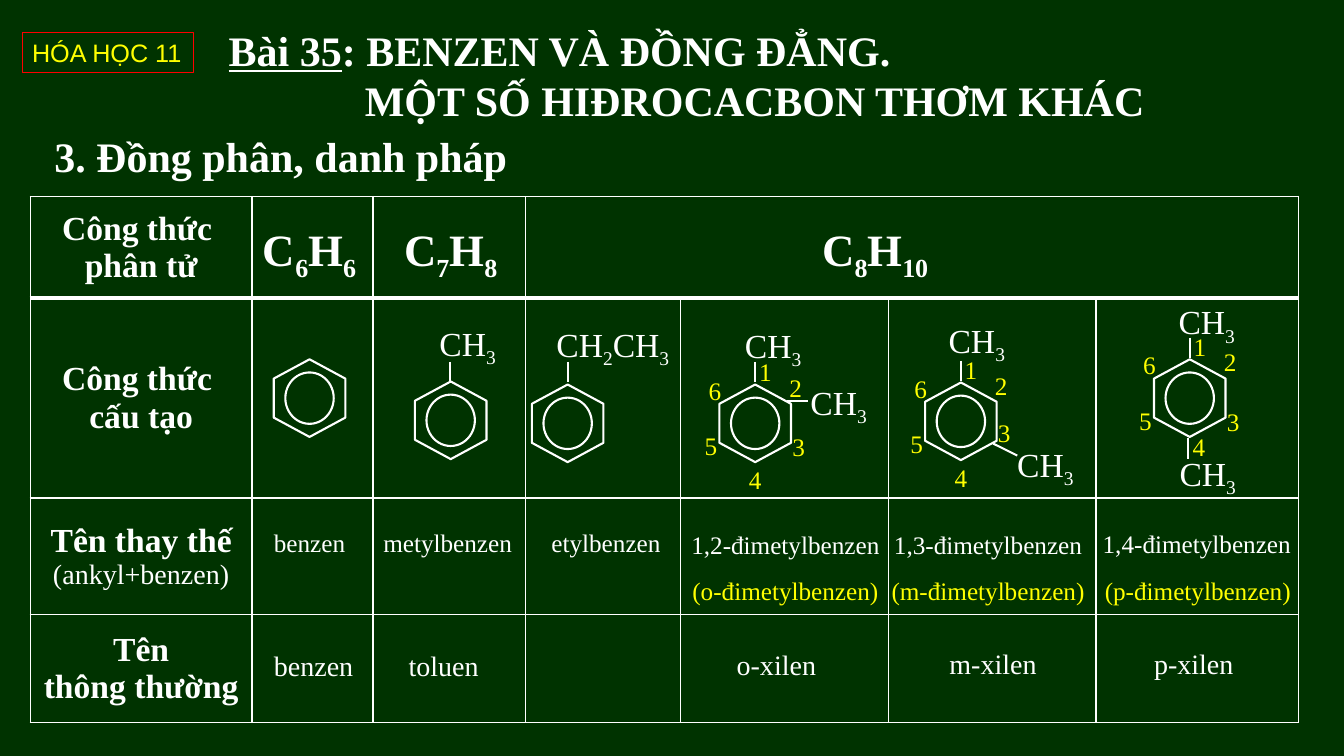
from itertools import groupby

from lxml import etree
from pptx import Presentation
from pptx.dml.color import RGBColor
from pptx.enum.shapes import MSO_CONNECTOR, MSO_SHAPE
from pptx.enum.text import MSO_ANCHOR, MSO_AUTO_SIZE, PP_ALIGN
from pptx.oxml.ns import qn
from pptx.util import Inches, Pt

GREEN = RGBColor(0x00, 0x33, 0x00)
WHITE = RGBColor(0xFF, 0xFF, 0xFF)
YELLOW = RGBColor(0xFF, 0xFF, 0x00)
RED = RGBColor(0xFF, 0x00, 0x00)
LEFT, CENTER = PP_ALIGN.LEFT, PP_ALIGN.CENTER
MIDDLE = MSO_ANCHOR.MIDDLE
GROW = MSO_AUTO_SIZE.SHAPE_TO_FIT_TEXT
HEXAGON, OVAL, RECTANGLE = MSO_SHAPE.HEXAGON, MSO_SHAPE.OVAL, MSO_SHAPE.RECTANGLE
STRAIGHT = MSO_CONNECTOR.STRAIGHT
SERIF, SANS = "Times New Roman", "Arial"

COLUMNS = (2.2, 1.2, 1.51, 1.54, 2.06, 2.06, 2.01)
ROWS = (1.01, 1.98, 1.16, 1.07)
HEADINGS = (
    ("Công thức ", "phân tử"),
    ("Công thức ", "cấu tạo"),
    ("Tên thay thế", "(ankyl+benzen)"),
    ("Tên", "thông thường"),
)
CARBON_OFFSETS = {
    "1": (-0.06, -0.71), "2": (0.24, -0.56), "3": (0.27, 0.03),
    "4": (-0.16, 0.36), "5": (-0.6, 0.02), "6": (-0.56, -0.53),
}
RINGS = ((3.07, 3.95), (4.47, 4.17), (5.63, 4.2), (7.49, 4.2), (9.53, 4.18), (11.8, 3.95))
NUMBERED_RINGS = (
    (RINGS[3], {}),
    (RINGS[4], {"3": (0.27, -0.09)}),
    (RINGS[5], {"4": (-0.07, 0.28)}),
)
BONDS = (
    (4.46, 3.59, 4.46, 3.79), (5.63, 3.59, 5.63, 3.79), (7.49, 3.59, 7.49, 3.79),
    (8.01, 3.98, 7.81, 3.98), (9.53, 3.58, 9.53, 3.78), (10.09, 4.52, 9.85, 4.4),
    (11.8, 3.35, 11.8, 3.55), (11.78, 4.35, 11.78, 4.55),
)
GROUPS = (
    ("CH3", 4.26, 3.15, 0.78), ("CH2CH3", 5.42, 3.16, 1.36), ("CH3", 7.29, 3.17, 0.78),
    ("CH3", 7.94, 3.74, 0.78), ("CH3", 9.31, 3.12, 0.78), ("CH3", 9.99, 4.35, 0.78),
    ("CH3", 11.59, 2.94, 0.78), ("CH3", 11.6, 4.44, 0.78),
)
FORMULAS = (("C6H6", 3.07), ("C7H8", 4.47), ("C8H10", 8.68))
NAMES = (
    ("benzen", 3.07, 5.18, 18, WHITE), ("metylbenzen", 4.44, 5.18, 18, WHITE),
    ("etylbenzen", 6.01, 5.18, 18, WHITE), ("1,2-đimetylbenzen", 7.79, 5.2, 18, WHITE),
    ("1,3-đimetylbenzen", 9.8, 5.2, 18, WHITE), ("1,4-đimetylbenzen", 11.87, 5.19, 18, WHITE),
    ("(o-đimetylbenzen)", 7.79, 5.66, 18, YELLOW), ("(m-đimetylbenzen)", 9.8, 5.66, 18, YELLOW),
    ("(p-đimetylbenzen)", 11.88, 5.66, 18, YELLOW), ("benzen", 3.11, 6.38, 20, WHITE),
    ("toluen", 4.4, 6.38, 20, WHITE), ("o-xilen", 7.7, 6.37, 20, WHITE),
    ("m-xilen", 9.85, 6.36, 20, WHITE), ("p-xilen", 11.84, 6.36, 20, WHITE),
)


def write(para, text, size=18, color=WHITE, font=SERIF, bold=False, underline=False,
          align=LEFT, formula=False):
    """Append text to a paragraph, lowering the digits of a formula."""
    para.alignment = align
    pieces = [(False, text)]
    if formula:
        pieces = [(digit, "".join(part)) for digit, part in groupby(text, str.isdigit)]
    for lowered, piece in pieces:
        span = para.add_run()
        span.text = piece
        span.font.size = Pt(size)
        span.font.name = font
        span.font.bold = bold
        span.font.underline = underline
        span.font.color.rgb = color
        if lowered:
            span.font._element.set("baseline", "-25000")


class Lesson:
    """Draws the elements of a chemistry lesson on one page."""

    def __init__(self, page):
        self.page = page
        page.background.fill.solid()
        page.background.fill.fore_color.rgb = GREEN

    def text(self, text, left, top, width, height, wrap=True, **style):
        box = self.page.shapes.add_textbox(
            Inches(left), Inches(top), Inches(width), Inches(height))
        box.text_frame.word_wrap = wrap
        box.text_frame.auto_size = GROW
        write(box.text_frame.paragraphs[0], text, **style)
        return box.text_frame

    def outline(self, shapes, kind, x, y, width, height, color=WHITE, weight=1.5):
        shape = shapes.add_shape(kind, Inches(x - width / 2), Inches(y - height / 2),
                                 Inches(width), Inches(height))
        shape.shadow.inherit = False
        shape.fill.background()
        shape.line.color.rgb = color
        shape.line.width = Pt(weight)
        return shape

    def badge(self, text, x, y, width, height):
        shape = self.outline(self.page.shapes, RECTANGLE, x, y, width, height, RED, 0.75)
        shape.text_frame.word_wrap = False
        shape.text_frame.auto_size = GROW
        write(shape.text_frame.paragraphs[0], text, color=YELLOW, font=SANS)

    def ring(self, x, y):
        shapes = self.page.shapes.add_group_shape().shapes
        hexagon = self.outline(shapes, HEXAGON, x, y, 0.77, 0.71)
        hexagon.adjustments[0] = 0.27
        hexagon.adjustments[1] = 1.155
        hexagon.rotation = 90
        self.outline(shapes, OVAL, x, y, 0.48, 0.51)

    def bond(self, *ends):
        line = self.page.shapes.add_connector(STRAIGHT, *map(Inches, ends))
        line.line.color.rgb = WHITE
        line.line.width = Pt(1.5)
        etree.SubElement(line._element.spPr, qn("a:effectLst"))

    def border(self, cell, side, weight):
        line = etree.SubElement(cell._tc.get_or_add_tcPr(), qn(f"a:ln{side}"), w=str(Pt(weight)))
        fill = etree.SubElement(line, qn("a:solidFill"))
        etree.SubElement(fill, qn("a:srgbClr"), val=str(WHITE))

    def table(self, left, top):
        table = self.page.shapes.add_table(
            len(ROWS), len(COLUMNS), Inches(left), Inches(top),
            Inches(sum(COLUMNS)), Inches(sum(ROWS))).table
        table.first_row = table.horz_banding = False
        for column, width in zip(table.columns, COLUMNS):
            column.width = Inches(width)
        for index, height in enumerate(ROWS):
            table.rows[index].height = Inches(height)
            for cell in table.rows[index].cells:
                for side in "LRTB":
                    thick = (index, side) in ((0, "B"), (1, "T"))
                    self.border(cell, side, 3 if thick else 1)
                cell.fill.background()
            heading = table.cell(index, 0)
            heading.vertical_anchor = MIDDLE
            first, second = HEADINGS[index]
            note = second.startswith("(")
            write(heading.text_frame.paragraphs[0], first, size=24, bold=True, align=CENTER)
            write(heading.text_frame.add_paragraph(), second, size=20 if note else 24,
                  bold=not note, align=CENTER)
        table.cell(0, 3).merge(table.cell(0, 6))


def main():
    deck = Presentation()
    deck.slide_width, deck.slide_height = Inches(13.33), Inches(7.5)
    lesson = Lesson(deck.slides.add_slide(deck.slide_layouts[6]))
    lesson.table(0.3, 1.95)
    for center in RINGS:
        lesson.ring(*center)
    for ends in BONDS:
        lesson.bond(*ends)
    for text, left, top, width in GROUPS:
        lesson.text(text, left, top, width, 0.5, wrap=False, size=24, formula=True)
    for text, x in FORMULAS:
        lesson.text(text, x - 0.84, 2.15, 1.68, 0.64, size=32, bold=True,
                    align=CENTER, formula=True)
    lesson.text("3. Đồng phân, danh pháp", 0.44, 1.25, 9.2, 0.61, size=30, bold=True)
    title = lesson.text("Bài 35", 2.17, 0.19, 9.59, 1.11, size=30, bold=True, underline=True)
    write(title.paragraphs[0], ": BENZEN VÀ ĐỒNG ĐẲNG.", size=30, bold=True)
    subtitle = title.add_paragraph()
    write(subtitle, "MỘT SỐ HIĐROCACBON THƠM KHÁC", size=30, bold=True)
    subtitle._p.get_or_add_pPr().set("marL", str(Inches(1.35)))
    lesson.badge("HÓA HỌC 11", 1.07, 0.52, 1.7, 0.4)
    for (x, y), moved in NUMBERED_RINGS:
        for number, (right, down) in {**CARBON_OFFSETS, **moved}.items():
            lesson.text(number, x + right, y + down, 0.33, 0.4, wrap=False, color=YELLOW)
    for text, x, top, size, color in NAMES:
        lesson.text(text, x - 1.29, top, 2.58, 0.4, size=size, color=color, align=CENTER)
    deck.save("out.pptx")


if __name__ == "__main__":
    main()
